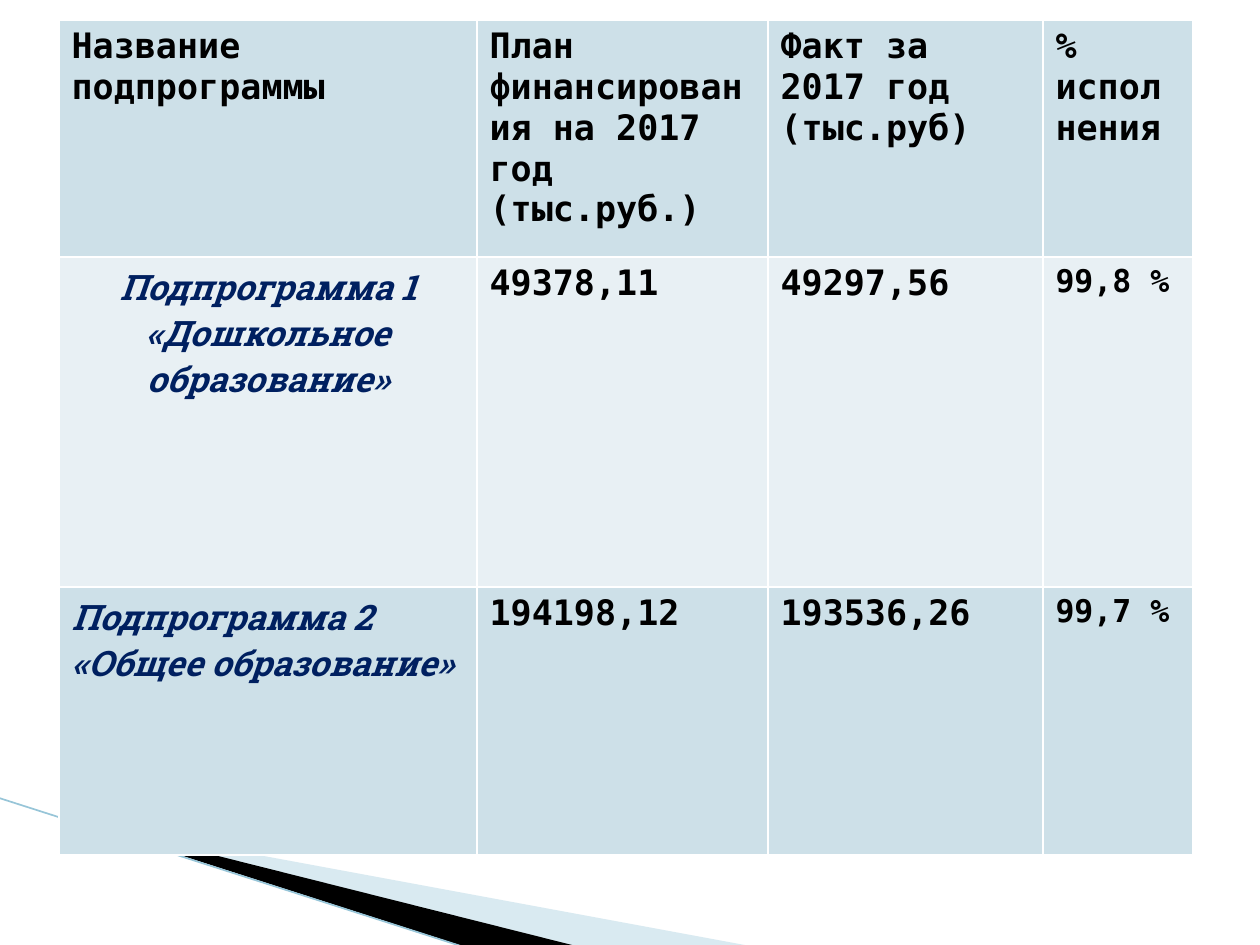
import pptx
import pptx.dml.color
import pptx.enum.text
import pptx.oxml
import pptx.oxml.ns
import pptx.util

SCALE = 914400 / 126  # EMU in one px
NS = pptx.oxml.ns.nsdecls("a")
HEX = {
    "dark": "CDE0E8", "light": "E8F0F4", "white": "FFFFFF", "black": "000000",
    "navy": "002060", "wedge": "A0CBDC", "line": "97C5D8",
}
CENTER = pptx.enum.text.PP_ALIGN.CENTER


def emu(px):
    return pptx.util.Emu(round(px * SCALE))


def rgb(name):
    return pptx.dml.color.RGBColor.from_string(HEX[name])


def write(frame, text, font="DejaVu Sans Mono", size=20, color="black",
          italic=False, align=None):
    """Fill the frame, one paragraph for each line of text."""
    frame.text = text
    for para in frame.paragraphs:
        para.alignment = align
        for run in para.runs:
            run.font.name = font
            run.font.size = pptx.util.Pt(size)
            run.font.bold = True
            run.font.italic = italic
            run.font.color.rgb = rgb(color)


class Deck:
    def __init__(self, wide, high):
        self.show = pptx.Presentation()
        self.show.slide_width, self.show.slide_height = emu(wide), emu(high)
        self.slide = self.show.slides.add_slide(self.show.slide_layouts[6])
        self.shapes = self.slide.shapes

    def wedge(self, points, color, alpha=100):
        pen = self.shapes.build_freeform(*points[0], scale=SCALE)
        pen.add_line_segments(points[1:], close=True)
        shape = pen.convert_to_shape()
        shape.shadow.inherit = False
        shape.line.fill.background()
        shape.fill.solid()
        shape.fill.fore_color.rgb = rgb(color)
        if alpha < 100:
            tint = shape.fill._xPr.solidFill[0]
            tint.append(pptx.oxml.parse_xml(f'<a:alpha {NS} val="{alpha * 1000}"/>'))

    def line(self, start, end, color, width):
        kind = pptx.enum.shapes.MSO_CONNECTOR.STRAIGHT
        line = self.shapes.add_connector(kind, *map(emu, start + end))
        line.line.color.rgb = rgb(color)
        line.line.width = pptx.util.Pt(width)
        line._element.spPr.append(pptx.oxml.parse_xml(f"<a:effectLst {NS}/>"))

    def edge(self, cell, color="white", width=1):
        """Draw all four borders of a cell."""
        props = cell._tc.get_or_add_tcPr()
        for side in "LRTB":
            props.append(pptx.oxml.parse_xml(
                f'<a:ln{side} {NS} w="{width * 12700}"><a:solidFill>'
                f'<a:srgbClr val="{HEX[color]}"/></a:solidFill></a:ln{side}>'))

    def table(self, left, top, cols, rows, cells):
        """Each cell is a pair of text and format."""
        grid = self.shapes.add_table(
            len(rows), len(cols), emu(left), emu(top),
            emu(sum(cols)), emu(sum(rows))).table
        for col, wide in zip(grid.columns, cols):
            col.width = emu(wide)
        for i, high in enumerate(rows):
            grid.rows[i].height = emu(high)
            for j, (text, form) in enumerate(cells[i]):
                cell = grid.cell(i, j)
                self.edge(cell)
                cell.fill.solid()
                cell.fill.fore_color.rgb = rgb("light" if i % 2 else "dark")
                write(cell.text_frame, text, **form)


def main():
    deck = Deck(1260, 945)
    deck.wedge([(69, 820), (750, 946), (575, 946), (69, 819)], "wedge", 40)
    deck.wedge([(67, 818), (576, 946), (469, 948), (68, 819)], "black")
    deck.line((-1, 798), (467, 948), "line", 0.95)

    name = {"font": "Roboto Slab", "color": "navy", "italic": True}
    small = {"size": 18}
    deck.table(59, 20, [418, 291, 275, 150], [237, 330, 268], [
        [("Название подпрограммы", {}),
         ("План финансирования на 2017 год\n(тыс.руб.)", {}),
         ("Факт за 2017 год (тыс.руб)", {}),
         ("% исполнения", {})],
        [("Подпрограмма 1 «Дошкольное образование»", {**name, "align": CENTER}),
         ("49378,11", {}), ("49297,56", {}), ("99,8 %", small)],
        [("Подпрограмма 2 «Общее образование»", name),
         ("194198,12", {}), ("193536,26", {}), ("99,7 %", small)],
    ])
    deck.show.save("out.pptx")


if __name__ == "__main__":
    main()
